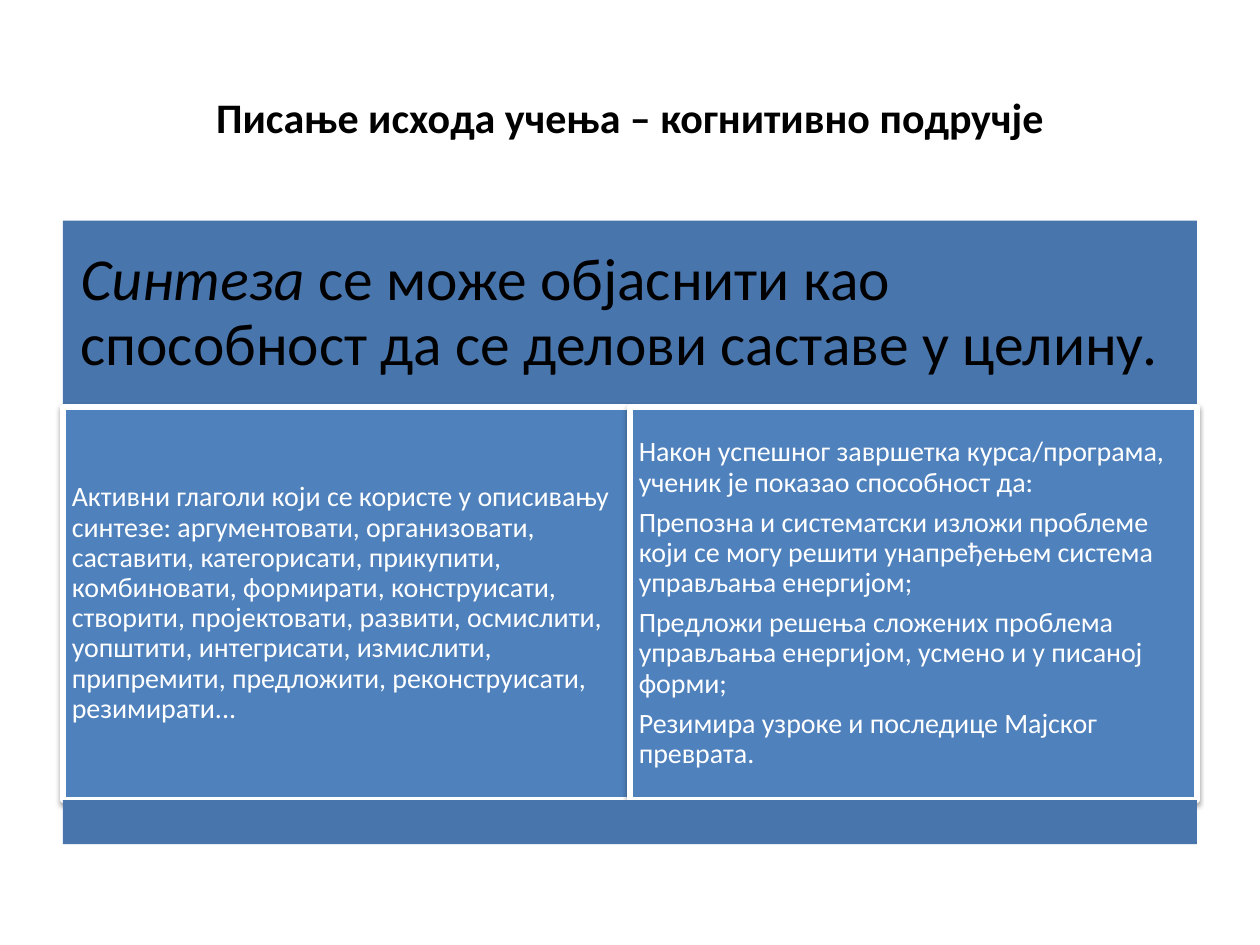
from lxml import etree
from pptx import Presentation
from pptx.dml.color import RGBColor
from pptx.enum import shapes, text
from pptx.oxml.ns import qn
from pptx.util import Inches, Pt

# Content: paragraphs are lists of (words, italic) runs
TITLE = [[("Писање исхода учења – когнитивно подручје", False)]]
HEAD = [[("Синтеза ", True),
         ("се може објаснити као способност да се делови саставе у целину.", False)]]
CELLS = [
    ["Активни глаголи који се користе у описивању синтезе: аргументовати, "
     "организовати, саставити, категорисати, прикупити, комбиновати, формирати, "
     "конструисати, створити, пројектовати, развити, осмислити, уопштити, "
     "интегрисати, измислити, припремити, предложити, реконструисати, резимирати..."],
    ["Након успешног завршетка курса/програма, ученик је показао способност да:",
     "Препозна и систематски изложи проблеме који се могу решити унапређењем "
     "система управљања енергијом;",
     "Предложи решења сложених проблема управљања енергијом, усмено и у писаној форми;",
     "Резимира узроке и последице Мајског преврата."],
]
COLORS = {"band": "4875AC", "cell": "4F81BD", "dark": "000000", "light": "FFFFFF"}
FONT = "Calibri"

# Layout
LEFT, WIDTH, TOP = 0.5, 9, 1.75
HEAD_H, CELL_H, FOOT_H = 1.48, 3.12, 0.35


def rgb(name):
    return RGBColor.from_string(COLORS[name])


def write(shape, paras, size, color, inset, bold=False, center=False):
    frame = shape.text_frame
    frame.word_wrap = True
    frame.vertical_anchor = text.MSO_ANCHOR.MIDDLE
    frame.margin_left = frame.margin_right = Inches(inset)
    frame.margin_top = frame.margin_bottom = Inches(inset)
    for i, runs in enumerate(paras):
        para = frame.add_paragraph() if i else frame.paragraphs[0]
        para.alignment = text.PP_ALIGN.CENTER if center else text.PP_ALIGN.LEFT
        if not center:
            para.line_spacing = 0.9
            para.space_after = Pt(size * 0.35)
        font = para.font
        font.name, font.size, font.bold = FONT, Pt(size), bold
        font.color.rgb = rgb(color)
        for words, slant in runs:
            run = para.add_run()
            run.text = words
            if slant:
                run.font.italic = True


def box(slide, x, y, w, h, fill):
    shape = slide.shapes.add_shape(
        shapes.MSO_SHAPE.RECTANGLE, Inches(x), Inches(y), Inches(w), Inches(h))
    shape.shadow.inherit = False
    shape.fill.solid()
    shape.fill.fore_color.rgb = rgb(fill)
    shape.line.fill.background()
    return shape


def frame_cell(shape):
    """White border and a soft shadow straight below."""
    shape.line.color.rgb = rgb("light")
    shape.line.width = Pt(3)
    effects = shape.fill._xPr.find(qn("a:effectLst"))
    shadow = etree.SubElement(
        effects, qn("a:outerShdw"), blurRad=str(Pt(3.1)), dist=str(Pt(1.6)),
        dir=str(90 * 60000), rotWithShape="0")
    tint = etree.SubElement(shadow, qn("a:srgbClr"), val=COLORS["dark"])
    etree.SubElement(tint, qn("a:alpha"), val="38000")


def main():
    deck = Presentation()
    deck.slide_width, deck.slide_height = Inches(10), Inches(7.5)
    slide = deck.slides.add_slide(deck.slide_layouts[6])

    # Title
    title = slide.shapes.add_textbox(
        Inches(LEFT), Inches(0.3), Inches(WIDTH), Inches(1.25))
    write(title, TITLE, 24, "dark", 0.1, bold=True, center=True)

    # Heading band
    head = box(slide, LEFT, TOP, WIDTH, HEAD_H, "band")
    write(head, HEAD, 34, "dark", 0.14)

    # Equal columns
    step = WIDTH / len(CELLS)
    for i, lines in enumerate(CELLS):
        cell = box(slide, LEFT + i * step, TOP + HEAD_H, step, CELL_H, "cell")
        frame_cell(cell)
        write(cell, [[(line, False)] for line in lines], 16, "light", 0.07)

    # Closing band
    box(slide, LEFT, TOP + HEAD_H + CELL_H, WIDTH, FOOT_H, "band")
    deck.save("out.pptx")


if __name__ == "__main__":
    main()
